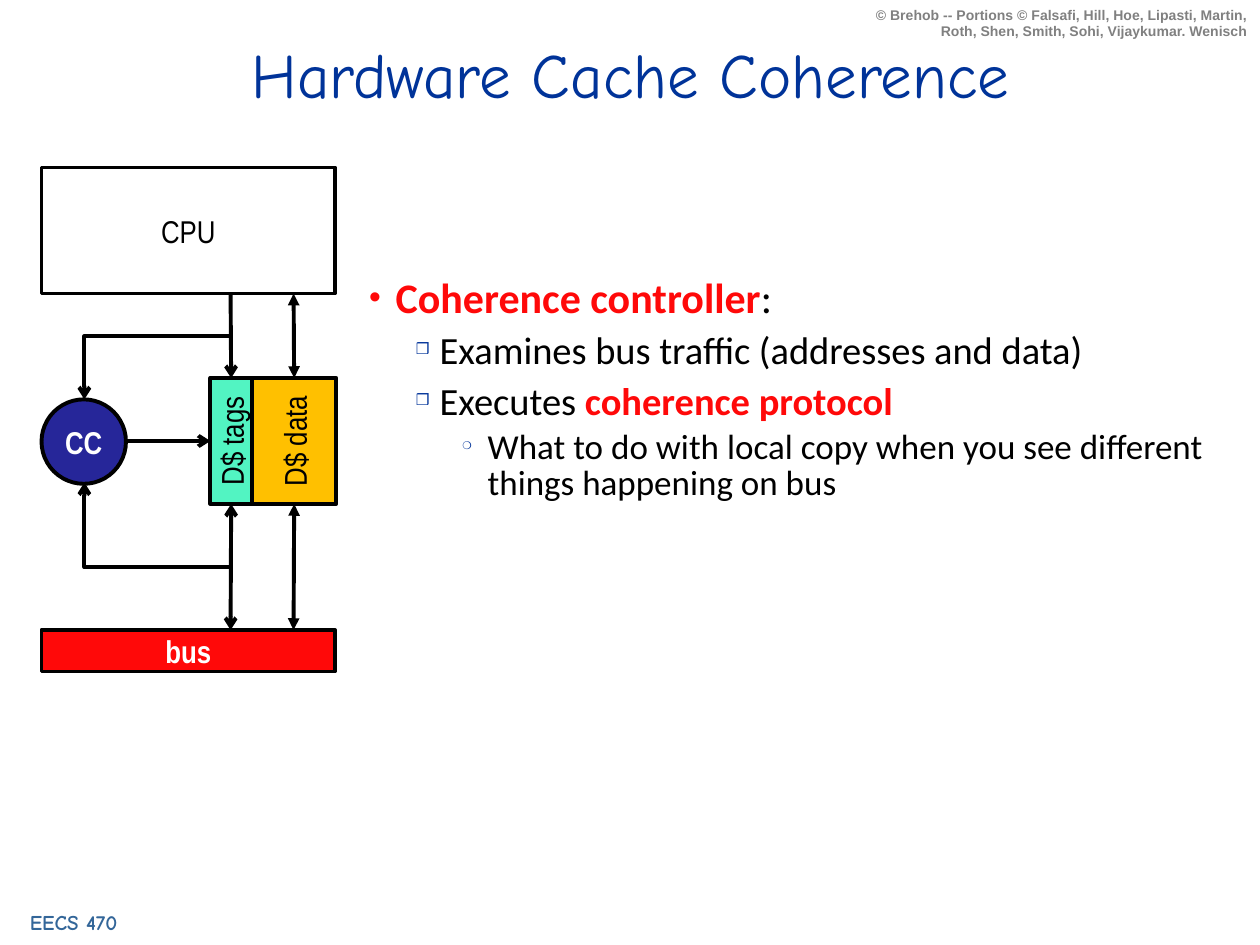
from lxml import etree
from pptx import Presentation
from pptx import util as u
from pptx.dml.color import RGBColor
from pptx.enum import shapes, text
from pptx.oxml.ns import qn

THEME = {
    "black": "000000", "white": "FFFFFF", "red": "FF0909", "navy": "262699",
    "title": "003399", "footer": "336699", "gray": "808080",
    "amber": "FFC000", "mint": "52F4C2",
    "title_size": 36, "levels": (24, 22, 20), "label_size": 18,
    "footer_size": 12, "credit_size": 8, "line": 2.25,
    "display": "Comic Neue", "body": "Calibri", "label": "Arial Narrow", "credit": "Arial",
}


def add_run(paragraph, words, color, **font_format):
    run = paragraph.add_run()
    run.text = words
    run.font.color.rgb = RGBColor.from_string(THEME[color])
    for name, value in font_format.items():
        setattr(run.font, name, value)


def style_line(item, head=None, tail=None):
    """Give a connector or open path its black stroke, arrowheads and no shadow."""
    item.line.width = u.Pt(THEME["line"])
    item.line.color.rgb = RGBColor.from_string(THEME["black"])
    ln = item.line._get_or_add_ln()
    for end, kind in (("a:headEnd", head), ("a:tailEnd", tail)):
        if kind:
            etree.SubElement(ln, qn(end), type=kind)
    etree.SubElement(item._element.spPr, qn("a:effectLst"))


prs = Presentation()
prs.slide_width, prs.slide_height = u.Inches(10), u.Inches(7.5)
slide = prs.slides.add_slide(prs.slide_layouts[1])
canvas = slide.shapes

# Title and bullet list
title, body = canvas.title, slide.placeholders[1]
for holder, box in ((title, (0.38, 0.25, 9.25, 0.67)), (body, (2.83, 2.17, 7, 4.66))):
    holder.left, holder.top, holder.width, holder.height = map(u.Inches, box)
    holder.text_frame.auto_size = text.MSO_AUTO_SIZE.NONE
    holder.text_frame.word_wrap = True
title.text_frame.vertical_anchor = text.MSO_ANCHOR.MIDDLE
heading = title.text_frame.paragraphs[0]
heading.alignment = text.PP_ALIGN.CENTER
add_run(heading, "Hardware Cache Coherence", "title",
        name=THEME["display"], size=u.Pt(THEME["title_size"]), bold=False)

# Per level: left indent, hanging indent, space before, bullet, bullet percent, bullet colour
LEVELS = (
    (0.21, 0.21, 15, "•", 80, "red"),
    (0.56, 0.19, 7, "❒", 40, "title"),
    (0.94, 0.20, 5, "❍", 30, "title"),
)
# Each point: level, then (words, emphasised) pieces
POINTS = (
    (0, [("Coherence controller", True), (":", False)]),
    (1, [("Examines bus traffic (addresses and data)", False)]),
    (1, [("Executes ", False), ("coherence protocol", True)]),
    (2, [("What to do with local copy when you see different things happening on bus", False)]),
)
for number, (level, pieces) in enumerate(POINTS):
    frame = body.text_frame
    point = frame.add_paragraph() if number else frame.paragraphs[0]
    indent, hanging, before, bullet, percent, bullet_color = LEVELS[level]
    size = u.Pt(THEME["levels"][level])
    for name, value in {"level": level, "line_spacing": size, "space_after": u.Pt(0),
                        "space_before": u.Pt(before)}.items():
        setattr(point, name, value)
    props = point._p.get_or_add_pPr()
    props.set("marL", str(u.Inches(indent)))
    props.set("indent", str(-u.Inches(hanging)))
    etree.SubElement(etree.SubElement(props, qn("a:buClr")), qn("a:srgbClr"),
                     val=THEME[bullet_color])
    etree.SubElement(props, qn("a:buSzPct"), val=str(percent * 1000))
    etree.SubElement(props, qn("a:buChar"), char=bullet)
    for words, strong in pieces:
        add_run(point, words, "red" if strong else "black",
                name=THEME["body"], size=size, bold=strong)

# Course name and credit
for words, box, align, color, font, size in (
    ("EECS 470", (-0.08, 7.17, 1.33, 0.3), text.PP_ALIGN.CENTER,
     "footer", "display", "footer_size"),
    ("© Brehob -- Portions © Falsafi, Hill, Hoe, Lipasti, Martin, Roth, Shen, Smith, "
     "Sohi, Vijaykumar. Wenisch", (6.83, 0, 3.17, 0.37), text.PP_ALIGN.RIGHT,
     "gray", "credit", "credit_size"),
):
    note = canvas.add_textbox(*map(u.Inches, box)).text_frame
    note.word_wrap = True
    note.paragraphs[0].alignment = align
    add_run(note.paragraphs[0], words, color,
            name=THEME[font], size=u.Pt(THEME[size]), bold=True)

# Hardware units: label, box, fill, text colour, bold, upright
RECT = shapes.MSO_SHAPE.RECTANGLE
CIRCLE = shapes.MSO_SHAPE.FLOWCHART_CONNECTOR
units = {}
for label, form, box, fill, color, bold, upright in (
    ("CPU", RECT, (0.33, 1.33, 2.33, 1), None, "black", False, False),
    ("D$ data", RECT, (2, 3, 0.67, 1), "amber", "black", False, True),
    ("D$ tags", RECT, (1.67, 3, 0.33, 1), "mint", "black", False, True),
    ("CC", CIRCLE, (0.33, 3.17, 0.67, 0.67), "navy", "white", True, False),
    ("bus", RECT, (0.33, 5, 2.33, 0.33), "red", "white", True, False),
):
    unit = units[label] = canvas.add_shape(form, *map(u.Inches, box))
    unit.shadow.inherit = False
    if fill:
        unit.fill.solid()
        unit.fill.fore_color.rgb = RGBColor.from_string(THEME[fill])
    else:
        unit.fill.background()
    unit.line.width = u.Pt(THEME["line"])
    unit.line.color.rgb = RGBColor.from_string(THEME["black"])
    frame = unit.text_frame
    frame.word_wrap = False
    frame.vertical_anchor = text.MSO_ANCHOR.MIDDLE
    if upright:
        frame._txBody.bodyPr.set("vert", "vert270")
    frame.paragraphs[0].alignment = text.PP_ALIGN.CENTER
    add_run(frame.paragraphs[0], label, color,
            name=THEME["label"], size=u.Pt(THEME["label_size"]), bold=bold)

# Straight links: ends, arrowheads, joined unit with its side, and which end joins it
TOP, LEFT, BOTTOM = 0, 1, 2
for ends, head, tail, joined, side, joins_begin in (
    ((1.83, 2.33, 1.83, 3), None, "arrow", "D$ tags", TOP, False),
    ((2.33, 2.33, 2.33, 3), "triangle", "triangle", "D$ data", TOP, False),
    ((2.33, 4, 2.33, 5), "triangle", "triangle", "D$ data", BOTTOM, True),
    ((1.83, 4, 1.83, 5), "arrow", "arrow", "D$ tags", BOTTOM, True),
    ((1.67, 3.5, 1, 3.5), "arrow", None, "D$ tags", LEFT, True),
):
    link = canvas.add_connector(shapes.MSO_CONNECTOR.STRAIGHT, *map(u.Inches, ends))
    join = link.begin_connect if joins_begin else link.end_connect
    join(units[joined], side)
    style_line(link, head, tail)

# Bent links from the tag lines to the coherence controller
for branch_y, controller_y in ((4.5, 3.83), (2.67, 3.17)):
    start, *bends = [(u.Inches(x), u.Inches(y)) for x, y in
                     ((1.83, branch_y), (0.67, branch_y), (0.67, controller_y))]
    path = canvas.build_freeform(*start)
    path.add_line_segments(bends, close=False)
    bent_link = path.convert_to_shape()
    bent_link.fill.background()
    style_line(bent_link, tail="arrow")

prs.save("out.pptx")
